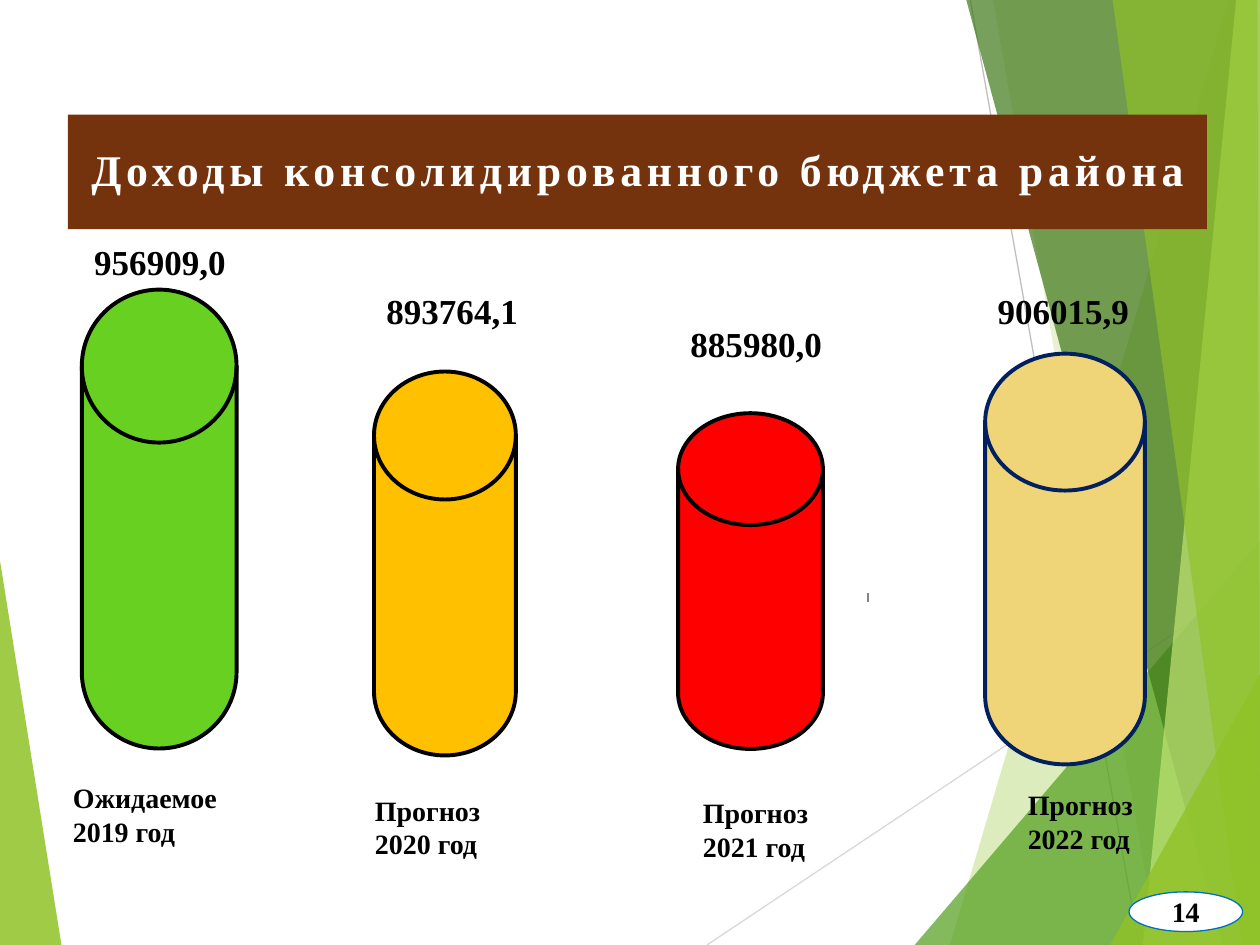
"""Build the slide on the consolidated district budget revenues."""
import pptx
import pptx.dml.color
import pptx.enum.shapes
import pptx.enum.text
import pptx.oxml
import pptx.oxml.ns
import pptx.util
from dataclasses import dataclass

Cm = pptx.util.Cm
Pt = pptx.util.Pt
SHAPES = pptx.enum.shapes.MSO_SHAPE
ALIGN = pptx.enum.text.PP_ALIGN
ANCHOR = pptx.enum.text.MSO_ANCHOR


@dataclass(frozen=True)
class Theme:
    font: str = "Times New Roman"
    title_size: float = 25
    value_size: float = 20
    label_size: float = 16
    title_spacing: int = 280
    ink: str = "000000"
    paper: str = "FFFFFF"
    banner: str = "74330C"
    badge_line: str = "0070C0"
    tick: str = "858585"
    leaf: str = "90C226"
    grass: str = "54A021"
    forest: str = "3F7819"
    lime: str = "C0E474"
    thin: float = 0.75
    thick: float = 2.25


theme = Theme()
WIDTH, HEIGHT = 25.4, 19.05

TITLE = "Доходы консолидированного бюджета района"
TITLE_BOX = (1.65, 2.87, 22.43, 1.07)
BANNER_BOX = (1.37, 2.31, 22.96, 2.31)
PAGE = "14"
PAGE_BOX = (22.76, 17.98, 2.29, 0.8)

REVENUES = [
    dict(value="956909,0", caption="Ожидаемое 2019 год", fill="67D020", line=theme.ink,
         disk=(1.65, 5.84, 3.12, 9.25), value_at=(1.65, 4.72, 3.48), caption_at=(1.22, 15.62, 4.01)),
    dict(value="893764,1", caption="Прогноз 2020 год", fill="FFC000", line=theme.ink,
         disk=(7.54, 7.49, 2.86, 7.74), value_at=(7.54, 5.71, 4.37), caption_at=(7.31, 15.87, 2.97)),
    dict(value="885980,0", caption="Прогноз 2021 год", fill="FF0000", line=theme.ink,
         disk=(13.67, 8.33, 2.92, 6.77), value_at=(13.67, 6.37, 3.25), caption_at=(13.92, 15.92, 3)),
    dict(value="906015,9", caption="Прогноз 2022 год", fill="F0D578", line="002060",
         disk=(19.86, 7.13, 3.22, 8.28), value_at=(19.86, 5.71, 3.66), caption_at=(20.47, 15.75, 2.74)),
]

LEFT_FACET = (theme.leaf, 85, [(0, 11.3), (1.24, HEIGHT), (0, HEIGHT)])
RIGHT_FACETS = [
    (theme.leaf, 30, [(24.77, 0), (19.15, HEIGHT), (WIDTH, HEIGHT), (WIDTH, 0)]),
    (theme.leaf, 20, [(20.02, 0), (23.34, HEIGHT), (WIDTH, HEIGHT), (WIDTH, 0)]),
    (theme.grass, 72, [(18.44, HEIGHT), (WIDTH, 10.9), (WIDTH, HEIGHT)]),
    (theme.forest, 70, [(19.48, 0), (24.64, HEIGHT), (WIDTH, HEIGHT), (WIDTH, 0)]),
    (theme.lime, 70, [(24.92, 0), (23.04, HEIGHT), (WIDTH, HEIGHT), (WIDTH, 0)]),
    (theme.leaf, 65, [(22.43, 0), (25.04, HEIGHT), (WIDTH, HEIGHT), (25.35, 0)]),
    (theme.leaf, 80, [(22.38, HEIGHT), (WIDTH, 13.59), (WIDTH, HEIGHT)]),
]
RAYS = [("D9D9D9", 14.25, HEIGHT, WIDTH, 11.61), ("BFBFBF", 19.56, 0, 22.96, HEIGHT)]
TICK = (theme.tick, 17.5, 11.96, 17.5, 12.14)


def rgb(code):
    return pptx.dml.color.RGBColor.from_string(code)


def paint(part, fill, line=None, width=theme.thin):
    part.shadow.inherit = False
    part.fill.solid()
    part.fill.fore_color.rgb = rgb(fill)
    if line:
        part.line.color.rgb = rgb(line)
        part.line.width = Pt(width)
    else:
        part.line.fill.background()


def add_facet(shapes, color, opacity, points):
    corners = [(Cm(x), Cm(y)) for x, y in points]
    builder = shapes.build_freeform(*corners[0])
    builder.add_line_segments(corners[1:])
    facet = builder.convert_to_shape()
    paint(facet, color)
    tint = facet.fill._xPr.find(".//" + pptx.oxml.ns.qn("a:srgbClr"))
    alpha = pptx.oxml.parse_xml(f'<a:alpha {pptx.oxml.ns.nsdecls("a")} val="{opacity * 1000}"/>')
    tint.append(alpha)


def add_stroke(shapes, color, *ends):
    stroke = shapes.add_connector(pptx.enum.shapes.MSO_CONNECTOR.STRAIGHT, *map(Cm, ends))
    stroke.line.color.rgb = rgb(color)
    stroke.line.width = Pt(theme.thin)
    effects = pptx.oxml.parse_xml(f'<a:effectLst {pptx.oxml.ns.nsdecls("a")}/>')
    stroke._element.spPr.append(effects)


def add_solid(shapes, preset, box, *look):
    solid = shapes.add_shape(preset, *map(Cm, box))
    paint(solid, *look)
    return solid


def write(frame, words, size, color=theme.ink, align=ALIGN.LEFT, inset=None):
    frame.word_wrap = True
    if inset is not None:
        frame.margin_left = frame.margin_right = Cm(inset)
        frame.margin_top = frame.margin_bottom = Cm(inset)
    paragraph = frame.paragraphs[0]
    paragraph.text = words
    paragraph.alignment = align
    font = paragraph.font
    font.name, font.size, font.bold = theme.font, Pt(size), True
    font.color.rgb = rgb(color)
    return paragraph


def add_words(shapes, box, *words, **style):
    return write(shapes.add_textbox(*map(Cm, box)).text_frame, *words, **style)


def main():
    deck = pptx.Presentation()
    deck.slide_width, deck.slide_height = Cm(WIDTH), Cm(HEIGHT)
    shapes = deck.slides.add_slide(deck.slide_layouts[6]).shapes

    add_facet(shapes, *LEFT_FACET)
    for ray in RAYS:
        add_stroke(shapes, *ray)
    for facet in RIGHT_FACETS:
        add_facet(shapes, *facet)
    add_stroke(shapes, *TICK)

    add_solid(shapes, SHAPES.RECTANGLE, BANNER_BOX, theme.banner)
    title = add_words(shapes, TITLE_BOX, TITLE, theme.title_size, theme.paper,
                      align=ALIGN.CENTER, inset=0)
    title.runs[0].font._element.set("spc", str(theme.title_spacing))

    for revenue in REVENUES:
        add_solid(shapes, SHAPES.FLOWCHART_MAGNETIC_DISK, revenue["disk"],
                  revenue["fill"], revenue["line"], theme.thick)
        add_words(shapes, (*revenue["value_at"], 1.11), revenue["value"], theme.value_size)
        add_words(shapes, (*revenue["caption_at"], 1.62), revenue["caption"], theme.label_size)

    badge = add_solid(shapes, SHAPES.OVAL, PAGE_BOX, theme.paper, theme.badge_line)
    badge.text_frame.vertical_anchor = ANCHOR.MIDDLE
    write(badge.text_frame, PAGE, theme.label_size, align=ALIGN.CENTER, inset=0)

    deck.save("out.pptx")


if __name__ == "__main__":
    main()
